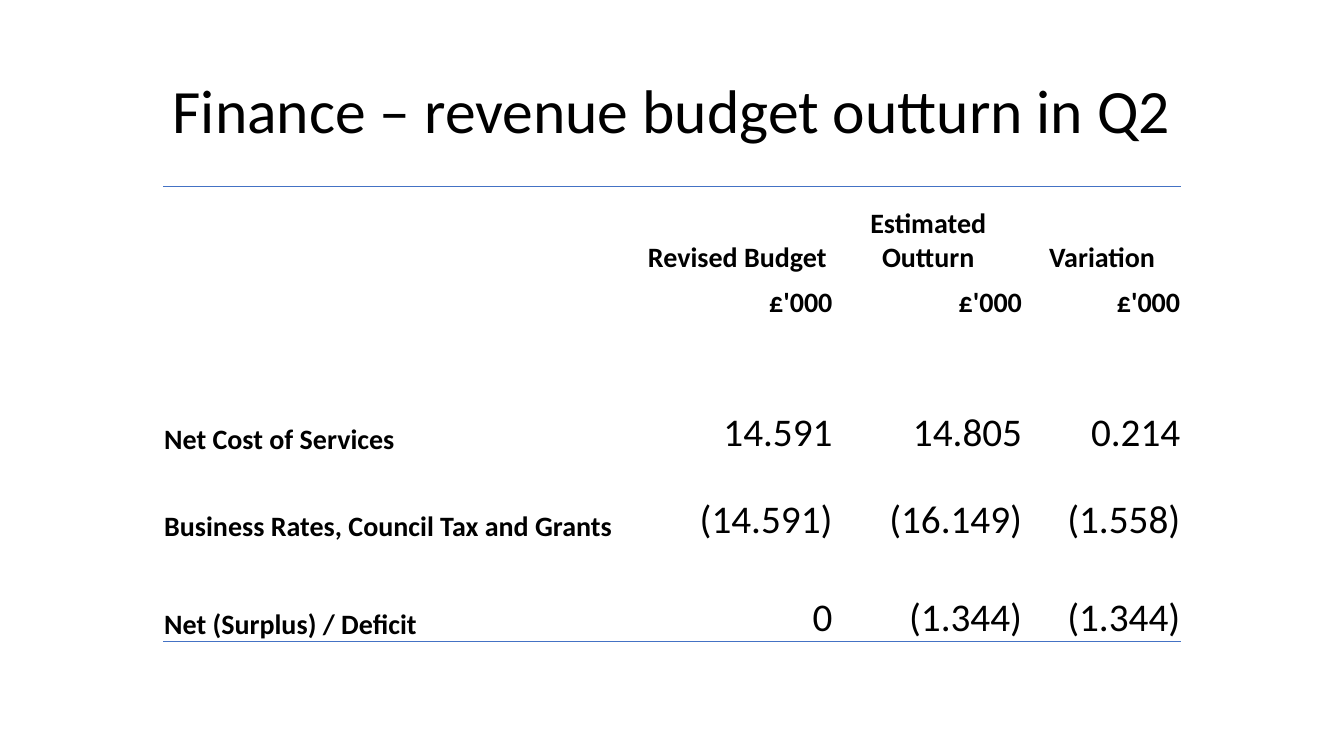
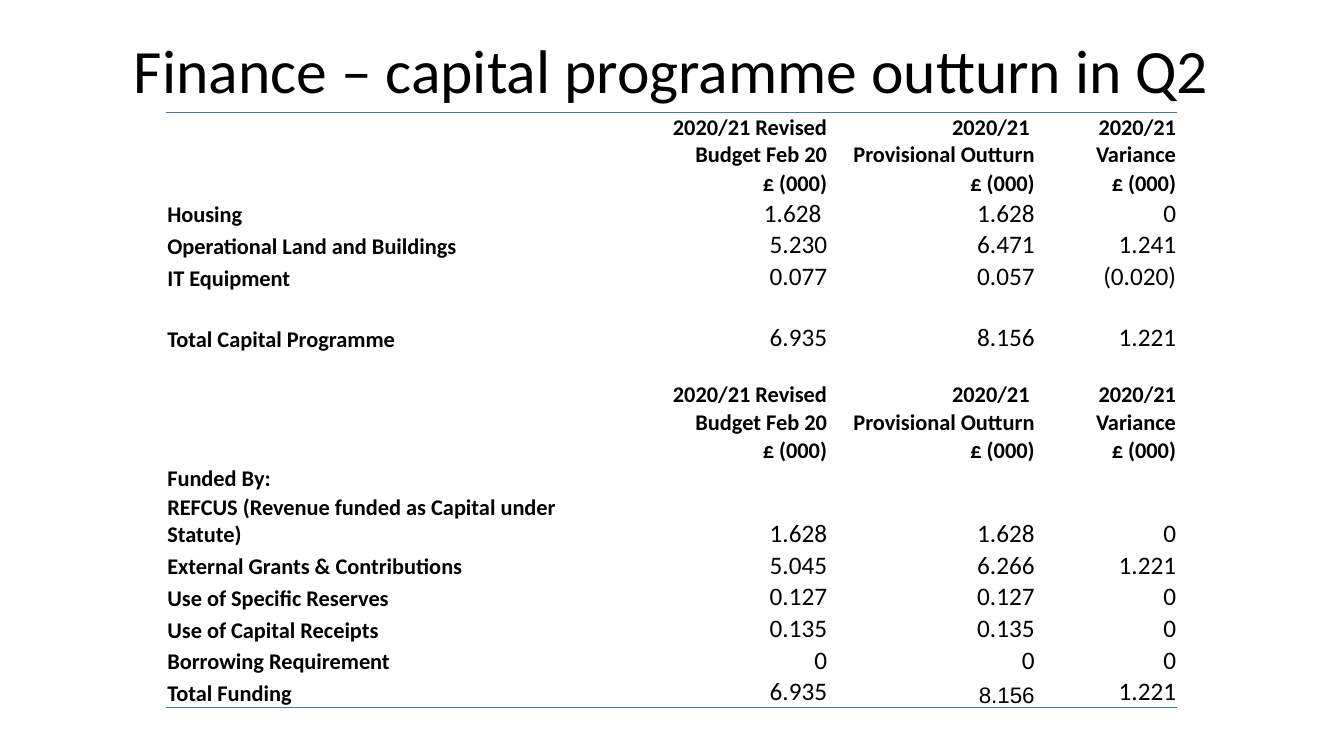
from dataclasses import dataclass

from lxml.etree import SubElement
from pptx import Presentation
from pptx.dml.color import RGBColor
from pptx.enum.text import MSO_ANCHOR as Anchor, PP_ALIGN as Align
from pptx.oxml.ns import qn
from pptx.slide import Slide
from pptx.table import _Cell as Cell
from pptx.util import Pt

# Shared style
FONT = "Calibri"
BLACK = "000000"
BLUE = "4472C4"
PLAIN_STYLE = "{2D5ABB26-0587-4C30-8999-92F81FD0307C}"
TITLE_SIZE = 44
INSET = 0.72


@dataclass
class Row:
    height: float
    cells: tuple[str, ...] = ("", "", "", "")
    heading: bool = False
    alignment: Align = Align.RIGHT


@dataclass
class TableSlide:
    title: str
    title_top: float
    left: float
    top: float
    columns: tuple[float, ...]
    label_size: float
    figure_size: float
    empty_size: float
    rows: list[Row]


def color(value: str) -> RGBColor:
    return RGBColor.from_string(value)


def format_runs(paragraph, size: float, bold: bool = False, name: str = FONT) -> None:
    for run in paragraph.runs:
        run.font.name = name
        run.font.size = Pt(size)
        run.font.bold = bold
        run.font.color.rgb = color(BLACK)


def add_title(slide: Slide, text: str, top: float) -> None:
    shape = slide.shapes.add_textbox(Pt(66), Pt(top), Pt(828), Pt(104.4))
    text_frame = shape.text_frame
    text_frame.word_wrap = True
    text_frame.vertical_anchor = Anchor.MIDDLE
    text_frame.text = text
    paragraph = text_frame.paragraphs[0]
    paragraph.alignment = Align.CENTER
    paragraph.line_spacing = 0.9
    format_runs(paragraph, TITLE_SIZE)


def add_border(cell: Cell, side: str) -> None:
    properties = cell._tc.get_or_add_tcPr()
    line = SubElement(properties, qn(f"a:{side}"), w=str(Pt(1)))
    fill = SubElement(line, qn("a:solidFill"))
    SubElement(fill, qn("a:srgbClr"), val=BLUE)
    properties.insert(0, line)


def fill_cell(cell: Cell, text: str, row: Row, is_label: bool, page: TableSlide) -> None:
    cell.margin_left = cell.margin_right = cell.margin_top = Pt(INSET)
    cell.margin_bottom = Pt(0)
    cell.vertical_anchor = Anchor.BOTTOM
    cell.fill.background()
    paragraph = cell.text_frame.paragraphs[0]
    if not text:
        SubElement(paragraph._p, qn("a:endParaRPr"), sz=str(int(page.empty_size * 100)))
        return
    paragraph.text = text
    paragraph.alignment = Align.LEFT if is_label else row.alignment
    bold = is_label or row.heading
    format_runs(paragraph, page.label_size if bold else page.figure_size, bold)


def add_table(slide: Slide, page: TableSlide):
    width = sum(page.columns)
    height = sum(row.height for row in page.rows)
    frame = slide.shapes.add_table(len(page.rows), len(page.columns), Pt(page.left),
                                   Pt(page.top), Pt(width), Pt(height))
    table = frame.table
    table.first_row = table.horz_banding = False
    table._tbl.tblPr.find(qn("a:tableStyleId")).text = PLAIN_STYLE
    for column, column_width in zip(table.columns, page.columns):
        column.width = Pt(column_width)
    for index, row in enumerate(page.rows):
        table.rows[index].height = Pt(row.height)
        for position, text in enumerate(row.cells):
            fill_cell(table.cell(index, position), text, row, position == 0, page)
    # Rules above and below the table
    for position in range(len(page.columns)):
        add_border(table.cell(0, position), "lnT")
        add_border(table.cell(len(page.rows) - 1, position), "lnB")
    return table


def add_page(presentation, page: TableSlide):
    slide = presentation.slides.add_slide(presentation.slide_layouts[6])
    add_title(slide, page.title, page.title_top)
    return add_table(slide, page)


# Revenue budget
REVENUE = TableSlide(
    "Finance – revenue budget outturn in Q2", 28.8, 116.6, 133.2,
    (341.3, 137.5, 135.4, 113), 20, 28, 18,
    [
        Row(63.4, ("", "Revised Budget", "Estimated Outturn", "Variation"), True, Align.CENTER),
        Row(31.7, ("", "£'000", "£'000", "£'000"), True),
        Row(31.7),
        Row(31.7),
        Row(35, ("Net Cost of Services", "14.591", "14.805", "0.214")),
        Row(61.9, ("Business Rates, Council Tax and Grants", "(14.591)", "(16.149)", "(1.558)")),
        Row(35),
        Row(35, ("Net (Surplus) / Deficit", "0", "(1.344)", "(1.344)")),
    ],
)

# Capital programme
LINE = 22.7
HEADINGS = [
    Row(40, ("", "2020/21 Revised Budget Feb 20", "2020/21 \nProvisional Outturn",
             "2020/21 Variance"), True),
    Row(20.3, ("", "£ (000)", "£ (000)", "£ (000)"), True),
]
CAPITAL = TableSlide(
    "Finance – capital programme outturn in Q2", 0, 118.8, 80.6,
    (334.5, 138.2, 148.3, 101), 16, 18, 14,
    [
        *HEADINGS,
        Row(LINE, ("Housing", "1.628 ", "1.628", "0")),
        Row(LINE, ("Operational Land and Buildings", "5.230", "6.471", "1.241")),
        Row(LINE, ("IT Equipment", "0.077", "0.057", "(0.020)")),
        Row(21),
        Row(LINE, ("Total Capital Programme", "6.935", "8.156", "1.221")),
        Row(19),
        *HEADINGS,
        Row(20.3, ("Funded By:", "", "", "")),
        Row(40, ("REFCUS (Revenue funded as Capital under Statute)", "1.628", "1.628", "0")),
        Row(LINE, ("External Grants & Contributions", "5.045", "6.266", "1.221")),
        Row(LINE, ("Use of Specific Reserves", "0.127", "0.127", "0")),
        Row(LINE, ("Use of Capital Receipts", "0.135", "0.135", "0")),
        Row(LINE, ("Borrowing Requirement", "0", "0", "0")),
        Row(LINE, ("Total Funding", "6.935", "8.156", "1.221")),
    ],
)


def main() -> None:
    presentation = Presentation()
    presentation.slide_width = Pt(960)
    presentation.slide_height = Pt(540)
    add_page(presentation, REVENUE)
    capital_table = add_page(presentation, CAPITAL)
    # The funding total for the outturn is set in Arial
    total_cell = capital_table.cell(len(CAPITAL.rows) - 1, 2)
    format_runs(total_cell.text_frame.paragraphs[0], 16, name="Arial")
    presentation.save("out.pptx")


if __name__ == "__main__":
    main()
